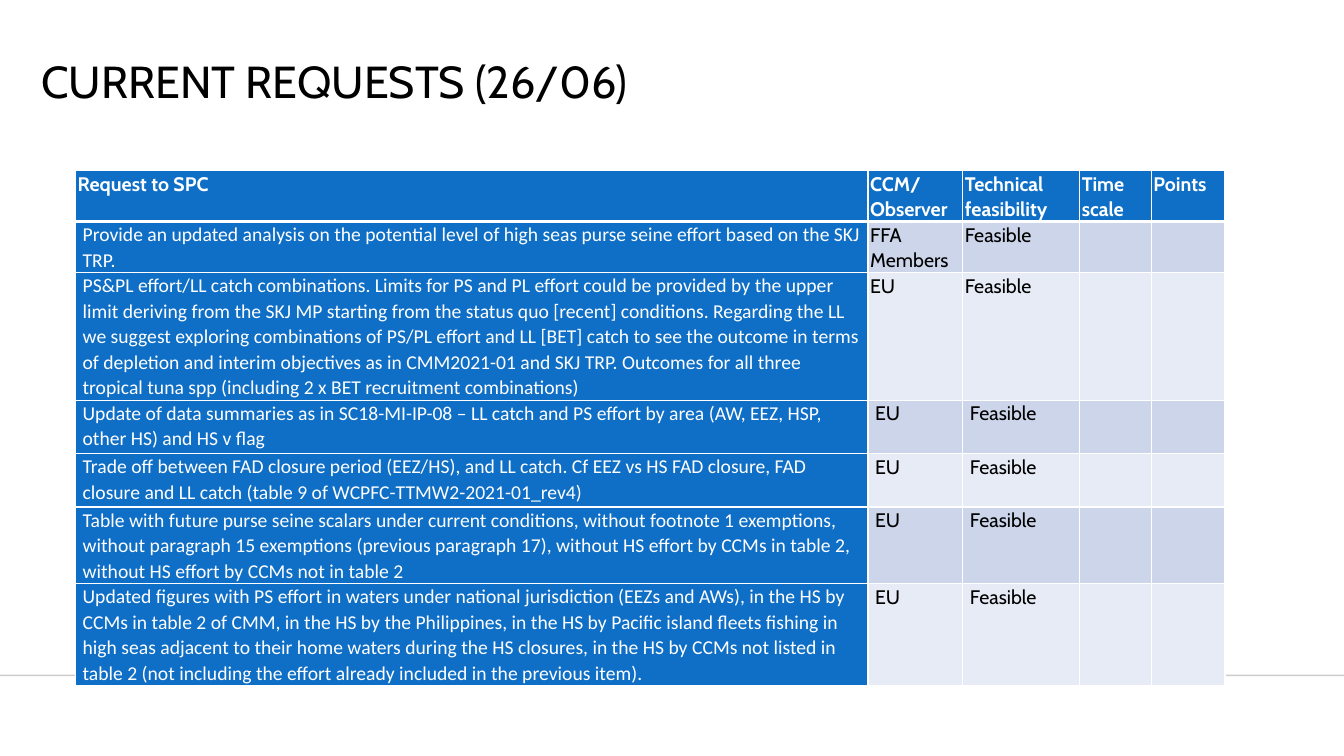
from lxml.etree import SubElement
from pptx import Presentation
from pptx.dml.color import RGBColor
from pptx.enum.shapes import MSO_CONNECTOR
from pptx.enum.text import MSO_ANCHOR, PP_ALIGN
from pptx.oxml.ns import qn
from pptx.util import Inches, Pt

BLUE = RGBColor(0x0F, 0x6F, 0xC6)
WHITE = RGBColor(0xFF, 0xFF, 0xFF)
BLACK = RGBColor(0x00, 0x00, 0x00)
RULE = RGBColor(0x00, 0x00, 0x01)
BANDS = [RGBColor(0xCC, 0xD5, 0xEA), RGBColor(0xE7, 0xEB, 0xF5)]

HEADERS = ["Request to SPC", "CCM/ Observer", "Technical feasibility", "Time scale", "Points"]
COLUMN_WIDTHS = [7.86, 0.94, 1.16, 0.71, 0.73]
ROW_HEIGHTS = [0.07, 0.38, 1.12, 0.53, 0.53, 0.53, 0.53]
NARROW, WIDE = 0.02, 0.07
# request, who asked, side margin of the short cells
REQUESTS = [
    ("Provide an updated analysis on the potential level of high seas purse seine effort "
     "based on the SKJ TRP.", "FFA Members", NARROW),
    ("PS&PL effort/LL catch combinations. Limits for PS and PL effort could be provided by "
     "the upper limit deriving from the SKJ MP starting from the status quo [recent] "
     "conditions. Regarding the LL we suggest exploring combinations of PS/PL effort and LL "
     "[BET] catch to see the outcome in terms of depletion and interim objectives as in "
     "CMM2021-01 and SKJ TRP. Outcomes for all three tropical tuna spp (including 2 x BET "
     "recruitment combinations)", "EU", NARROW),
    ("Update of data summaries as in SC18-MI-IP-08 – LL catch and PS effort by area (AW, "
     "EEZ, HSP, other HS) and HS v flag", "EU", WIDE),
    ("Trade off between FAD closure period (EEZ/HS), and LL catch. Cf EEZ vs HS FAD closure, "
     "FAD closure and LL catch (table 9 of WCPFC-TTMW2-2021-01_rev4)", "EU", WIDE),
    ("Table with future purse seine scalars under current conditions, without footnote 1 "
     "exemptions, without paragraph 15 exemptions (previous paragraph 17), without HS effort "
     "by CCMs in table 2, without HS effort by CCMs not in table 2", "EU", WIDE),
    ("Updated figures with PS effort in waters under national jurisdiction (EEZs and AWs), in "
     "the HS by CCMs in table 2 of CMM, in the HS by the Philippines, in the HS by Pacific "
     "island fleets fishing in high seas adjacent to their home waters during the HS "
     "closures, in the HS by CCMs not listed in table 2 (not including the effort already "
     "included in the previous item).", "EU", WIDE),
]


def write(frame, text, size=14, font="Cabin", color=BLACK, bold=False, spacing=1.07, after=8):
    paragraph = frame.paragraphs[0]
    paragraph.alignment = PP_ALIGN.LEFT
    paragraph.line_spacing = spacing
    paragraph.space_before = Pt(0)
    paragraph.space_after = Pt(after)
    run = paragraph.add_run()
    run.text = text
    run.font.size = Pt(size)
    run.font.name = font
    run.font.bold = bold
    run.font.color.rgb = color


def style_cell(cell, fill, bottom=1):
    """Give a cell white borders, then its fill, which must follow them in the XML."""
    properties = cell._tc.get_or_add_tcPr()
    for side, points in (("lnL", 1), ("lnR", 1), ("lnT", 1), ("lnB", bottom)):
        border = SubElement(properties, qn(f"a:{side}"), w=str(Pt(points)))
        solid = SubElement(border, qn("a:solidFill"))
        SubElement(solid, qn("a:srgbClr"), val=str(WHITE))
    cell.fill.solid()
    cell.fill.fore_color.rgb = fill


prs = Presentation()
prs.slide_width = Inches(13.33)
prs.slide_height = Inches(7.5)
slide = prs.slides.add_slide(prs.slide_layouts[5])

# Footer rule
rule = slide.shapes.add_connector(
    MSO_CONNECTOR.STRAIGHT, Inches(0), Inches(6.7), Inches(13.33), Inches(6.7))
rule.line.width = Pt(1)
rule.line.color.rgb = RULE
rule_color = rule.line._ln.find(f".//{qn('a:srgbClr')}")
SubElement(rule_color, qn("a:alpha"), val="20000")
SubElement(rule._element.spPr, qn("a:effectLst"))

# Title
title = slide.shapes.title
title.left, title.top = Inches(0.31), Inches(0.54)
title.width, title.height = Inches(10.5), Inches(1.16)
title.text_frame.vertical_anchor = MSO_ANCHOR.TOP
title.text_frame.word_wrap = True
write(title.text_frame, "CURRENT REQUESTS (26/06)", size=32, spacing=0.9, after=0)

# Table of requests
requests = slide.shapes.add_table(
    len(ROW_HEIGHTS), len(COLUMN_WIDTHS), Inches(0.75), Inches(1.69),
    Inches(sum(COLUMN_WIDTHS)), Inches(sum(ROW_HEIGHTS))).table
for column, width in zip(requests.columns, COLUMN_WIDTHS):
    column.width = Inches(width)
for row, height in zip(requests.rows, ROW_HEIGHTS):
    row.height = Inches(height)

rows = [(HEADERS, [NARROW] * 5)]
for request, observer, margin in REQUESTS:
    rows.append(([request, observer, "Feasible", "", ""], [WIDE, margin, margin, None, None]))

for r, (texts, margins) in enumerate(rows):
    is_header = r == 0
    for c, (text, margin) in enumerate(zip(texts, margins)):
        cell = requests.cell(r, c)
        on_blue = is_header or c == 0
        style_cell(cell, BLUE if on_blue else BANDS[(r - 1) % 2], bottom=3 if is_header else 1)
        if not text:
            continue
        cell.margin_left = cell.margin_right = Inches(margin)
        cell.margin_top = cell.margin_bottom = 0
        write(cell.text_frame, text, bold=is_header, color=WHITE if on_blue else BLACK,
              font="Calibri" if c == 0 and not is_header else "Cabin")

prs.save("out.pptx")
